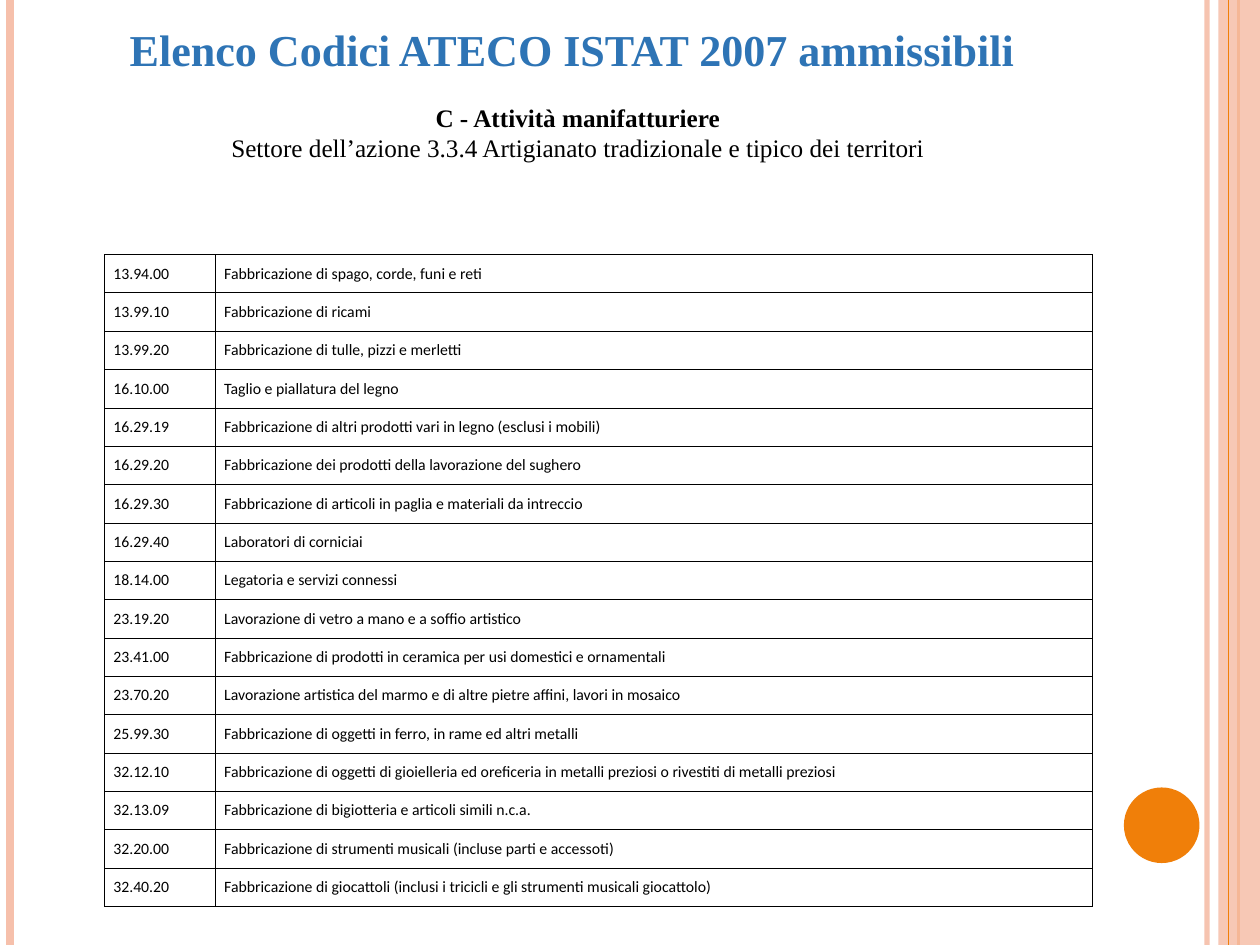
import pptx
import pptx.dml.color
import pptx.enum.shapes
import pptx.enum.text
import pptx.oxml
import pptx.oxml.ns
import pptx.util
from lxml import etree

Inches = pptx.util.Inches
Pt = pptx.util.Pt
RGBColor = pptx.dml.color.RGBColor
PP_ALIGN = pptx.enum.text.PP_ALIGN
MSO_ANCHOR = pptx.enum.text.MSO_ANCHOR
qn = pptx.oxml.ns.qn

BLACK = RGBColor(0x00, 0x00, 0x00)
BLUE = RGBColor(0x2E, 0x74, 0xB5)
ORANGE = RGBColor(0xF0, 0x7F, 0x09)
PEACH = RGBColor(0xF6, 0xC0, 0xAB)

SLIDE_WIDTH, SLIDE_HEIGHT = 10, 7.5

ACTIVITIES = [
    ("13.94.00", "Fabbricazione di spago, corde, funi e reti"),
    ("13.99.10", "Fabbricazione di ricami"),
    ("13.99.20", "Fabbricazione di tulle, pizzi e merletti"),
    ("16.10.00", "Taglio e piallatura del legno"),
    ("16.29.19", "Fabbricazione di altri prodotti vari in legno (esclusi i mobili)"),
    ("16.29.20", "Fabbricazione dei prodotti della lavorazione del sughero"),
    ("16.29.30", "Fabbricazione di articoli in paglia e materiali da intreccio"),
    ("16.29.40", "Laboratori di corniciai"),
    ("18.14.00", "Legatoria e servizi connessi"),
    ("23.19.20", "Lavorazione di vetro a mano e a soffio artistico"),
    ("23.41.00", "Fabbricazione di prodotti in ceramica per usi domestici e ornamentali"),
    ("23.70.20", "Lavorazione artistica del marmo e di altre pietre affini, lavori in mosaico"),
    ("25.99.30", "Fabbricazione di oggetti in ferro, in rame ed altri metalli"),
    ("32.12.10", "Fabbricazione di oggetti di gioielleria ed oreficeria in metalli preziosi "
                 "o rivestiti di metalli preziosi"),
    ("32.13.09", "Fabbricazione di bigiotteria e articoli simili n.c.a."),
    ("32.20.00", "Fabbricazione di strumenti musicali (incluse parti e accessoti)"),
    ("32.40.20", "Fabbricazione di giocattoli (inclusi i tricicli e gli strumenti musicali giocattolo)"),
]


def set_opacity(element, percent):
    color = next(element.iter(qn("a:srgbClr")))
    etree.SubElement(color, qn("a:alpha")).set("val", str(percent * 1000))


class SlideBuilder:
    title_font = "Times New Roman"
    table_font = "Calibri"
    table_size = Pt(9)
    border_width = Pt(0.5)

    def __init__(self, slide):
        self.slide = slide

    def add_run(self, paragraph, text, font, size, color, bold=False):
        run = paragraph.add_run()
        run.text = text
        run.font.name = font
        run.font.size = size
        run.font.bold = bold
        run.font.color.rgb = color

    def stripe(self, x, color, width, opacity=100):
        """Draw a vertical line over the full slide height."""
        line = self.slide.shapes.add_connector(
            pptx.enum.shapes.MSO_CONNECTOR.STRAIGHT,
            Inches(x), 0, Inches(x), Inches(SLIDE_HEIGHT))
        line.line.color.rgb = color
        line.line.width = Pt(width)
        properties = line._element.spPr
        if opacity < 100:
            set_opacity(properties, opacity)
        etree.SubElement(properties, qn("a:effectLst"))

    def solid(self, preset, left, top, width, height, color, opacity=100):
        shape = self.slide.shapes.add_shape(
            preset, Inches(left), Inches(top), Inches(width), Inches(height))
        shape.shadow.inherit = False
        shape.fill.solid()
        shape.fill.fore_color.rgb = color
        shape.line.fill.background()
        if opacity < 100:
            set_opacity(shape._element.spPr, opacity)

    def title(self, left, top, width, height, lines):
        """Fill the title with (text, size, colour, bold, points before) lines."""
        title = self.slide.shapes.title
        title.left, title.top = Inches(left), Inches(top)
        title.width, title.height = Inches(width), Inches(height)
        frame = title.text_frame
        frame.word_wrap = True
        frame.auto_size = pptx.enum.text.MSO_AUTO_SIZE.NONE
        frame.vertical_anchor = MSO_ANCHOR.BOTTOM
        frame.margin_top = 0
        frame.margin_bottom = Inches(0.26)
        for index, (text, size, color, bold, before) in enumerate(lines):
            paragraph = frame.add_paragraph() if index else frame.paragraphs[0]
            paragraph.alignment = PP_ALIGN.CENTER
            paragraph.space_before = Pt(before)
            self.add_run(paragraph, text, self.title_font, Pt(size), color, bold)

    def table(self, left, top, column_widths, height, rows):
        table = self.slide.shapes.add_table(
            len(rows), len(column_widths), Inches(left), Inches(top),
            Inches(sum(column_widths)), Inches(height)).table
        table.first_row = table.horz_banding = False
        for column, width in zip(table.columns, column_widths):
            column.width = Inches(width)
        for row, texts in zip(table.rows, rows):
            row.height = Inches(height / len(rows))
            for cell, text in zip(row.cells, texts):
                self.fill_cell(cell, text)

    def fill_cell(self, cell, text):
        cell.vertical_anchor = MSO_ANCHOR.MIDDLE
        cell.margin_left = cell.margin_right = Inches(0.07)
        cell.margin_top = cell.margin_bottom = Inches(0.05)
        self.add_run(cell.text_frame.paragraphs[0], text,
                     self.table_font, self.table_size, BLACK)
        properties = cell._tc.get_or_add_tcPr()
        for side in ("a:lnL", "a:lnR", "a:lnT", "a:lnB"):
            border = etree.SubElement(properties, qn(side), w=str(self.border_width))
            fill = etree.SubElement(border, qn("a:solidFill"))
            etree.SubElement(fill, qn("a:srgbClr"), val=str(BLACK))
        cell.fill.background()


def main():
    presentation = pptx.Presentation()
    presentation.slide_width = Inches(SLIDE_WIDTH)
    presentation.slide_height = Inches(SLIDE_HEIGHT)
    title_only = presentation.slide_layouts[5]
    builder = SlideBuilder(presentation.slides.add_slide(title_only))
    shapes = pptx.enum.shapes.MSO_SHAPE

    builder.stripe(9.58, PEACH, 3, opacity=93)
    builder.stripe(0.08, PEACH, 4.5)
    builder.stripe(9.83, ORANGE, 1.5)
    builder.solid(shapes.RECTANGLE, 9.67, 0, 0.33, SLIDE_HEIGHT, PEACH, opacity=87)
    builder.stripe(9.75, ORANGE, 0.75)
    builder.solid(shapes.OVAL, 8.92, 6.25, 0.6, 0.6, ORANGE)

    builder.title(0.5, 0.3, 8.17, 1.25, [
        ("Elenco Codici ATECO ISTAT 2007 ammissibili ", 25.2, BLUE, True, 0),
        ("C - Attività manifatturiere", 14.4, BLACK, True, 15),
        ("Settore dell’azione 3.3.4 Artigianato tradizionale e tipico dei territori",
         14.4, BLACK, False, 0),
    ])
    builder.table(0.83, 2.02, [0.88, 6.96], 5.18, ACTIVITIES)
    presentation.save("out.pptx")


if __name__ == "__main__":
    main()
